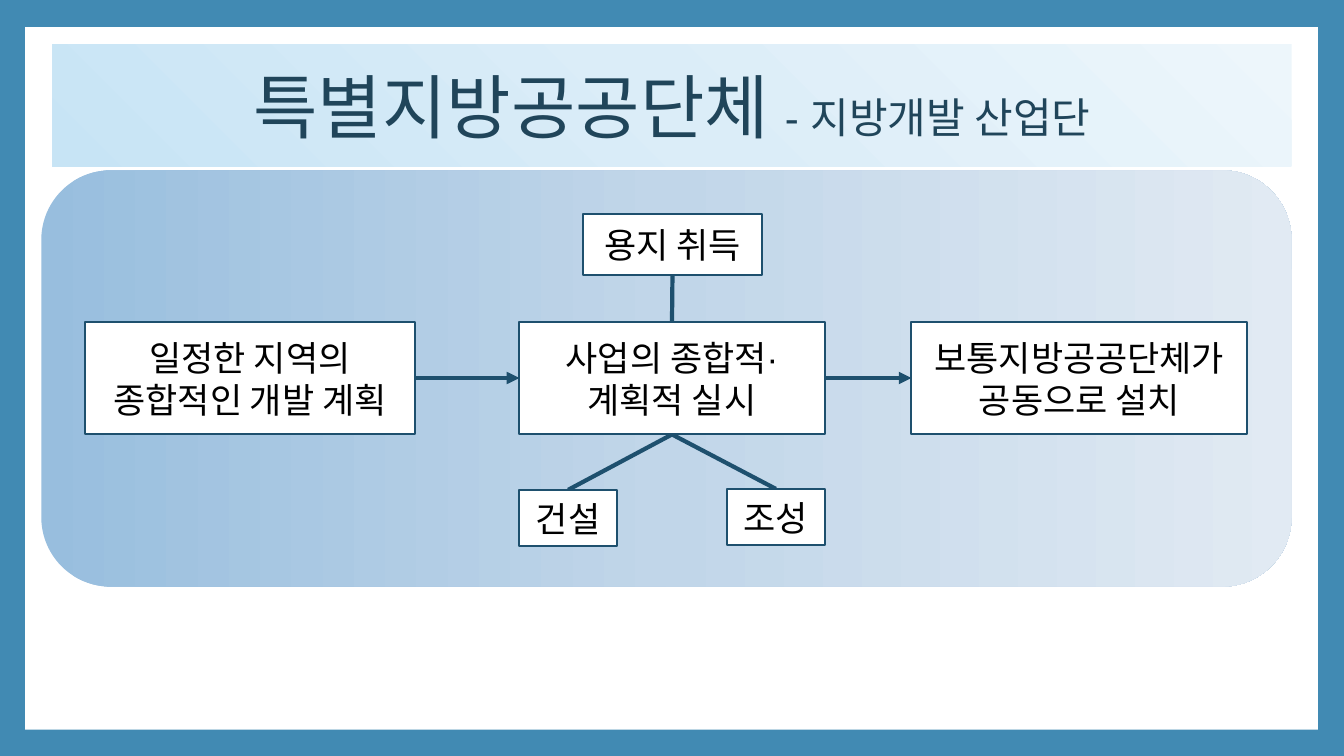
from lxml import etree
from pptx import Presentation
from pptx.dml.color import RGBColor
from pptx.enum.shapes import MSO_CONNECTOR, MSO_SHAPE
from pptx.enum.text import MSO_ANCHOR, PP_ALIGN
from pptx.oxml.ns import qn
from pptx.util import Inches, Pt

COLORS = {
    "frame": "418AB3",
    "white": "FFFFFF",
    "line": "1E506E",
    "title": "20455A",
    "text": "000000",
}
PANEL_STOPS = ["98BEDE", "C1D6E9", "E1EAF3"]
TITLE_STOPS = ["C7E4F5", "DBEDF8", "EDF6FB"]
TOP, LEFT, BOTTOM, RIGHT = range(4)


def add_box(kind, left, top, width, height):
    box = page.shapes.add_shape(kind, Inches(left), Inches(top), Inches(width), Inches(height))
    box.shadow.inherit = False
    box.fill.solid()
    box.fill.fore_color.rgb = RGBColor.from_string(COLORS["white"])
    box.line.fill.background()
    box.text_frame.word_wrap = True
    box.text_frame.vertical_anchor = MSO_ANCHOR.MIDDLE
    return box


def set_gradient(box, stops):
    box.fill.gradient()
    gradient = box._element.spPr.find(qn("a:gradFill"))
    for child in list(gradient):
        gradient.remove(child)
    stop_list = etree.SubElement(gradient, qn("a:gsLst"))
    for index, color in enumerate(stops):
        stop = etree.SubElement(stop_list, qn("a:gs"), pos=str(index * 50000))
        etree.SubElement(stop, qn("a:srgbClr"), val=color)
    return gradient


deck = Presentation()
deck.slide_width = Inches(13.33)
deck.slide_height = Inches(7.5)
page = deck.slides.add_slide(deck.slide_layouts[6])
page.background.fill.solid()
page.background.fill.fore_color.rgb = RGBColor.from_string(COLORS["frame"])

add_box(MSO_SHAPE.RECTANGLE, 0.25, 0.27, 12.82, 6.97)

panel = add_box(MSO_SHAPE.ROUNDED_RECTANGLE, 0.41, 1.69, 12.4, 4.13)
etree.SubElement(set_gradient(panel, PANEL_STOPS), qn("a:lin"), ang="0", scaled="0")

title = add_box(MSO_SHAPE.RECTANGLE, 0.52, 0.44, 12.29, 1.21)
circle = etree.SubElement(set_gradient(title, TITLE_STOPS), qn("a:path"), path="circle")
etree.SubElement(circle, qn("a:fillToRect"), t="100000", r="100000")
para = title.text_frame.paragraphs[0]
para.alignment = PP_ALIGN.CENTER
para.font.name = "Arial"
para.font.color.rgb = RGBColor.from_string(COLORS["title"])
for text, size in [("특별지방공공단체 ", 50), ("- 지방개발 산업단", 30)]:
    span = para.add_run()
    span.text = text
    span.font.size = Pt(size)

steps = [
    ("develop", 7.21, 4.85, 0.97, 0.56, ["조성"]),
    ("build", 5.15, 4.86, 0.97, 0.56, ["건설"]),
    ("land", 5.78, 2.12, 1.78, 0.61, ["용지 취득"]),
    ("founding", 9.04, 3.19, 3.33, 1.12, ["보통지방공공단체가 공동으로 설치"]),
    ("project", 5.15, 3.19, 3.03, 1.12, ["사업의 종합적·", "계획적 실시"]),
    ("plan", 0.84, 3.19, 3.28, 1.12, ["일정한 지역의 종합적인 개발 계획"]),
]
boxes = {}
for name, left, top, width, height, lines in steps:
    box = add_box(MSO_SHAPE.RECTANGLE, left, top, width, height)
    box.line.color.rgb = RGBColor.from_string(COLORS["line"])
    box.line.width = Pt(1.5)
    box.text_frame.text = "\n".join(lines)
    for para in box.text_frame.paragraphs:
        para.alignment = PP_ALIGN.CENTER
        para.font.name = "Arial"
        para.font.size = Pt(25)
        para.font.color.rgb = RGBColor.from_string(COLORS["text"])
    boxes[name] = box

links = [
    ("project", TOP, "land", BOTTOM, False),
    ("project", BOTTOM, "build", TOP, False),
    ("project", BOTTOM, "develop", TOP, False),
    ("plan", RIGHT, "project", LEFT, True),
    ("project", RIGHT, "founding", LEFT, True),
]
for start, start_side, end, end_side, has_arrow in links:
    link = page.shapes.add_connector(MSO_CONNECTOR.STRAIGHT, 0, 0, 0, 0)
    link.begin_connect(boxes[start], start_side)
    link.end_connect(boxes[end], end_side)
    link.line.color.rgb = RGBColor.from_string(COLORS["line"])
    link.line.width = Pt(3)
    if has_arrow:
        etree.SubElement(link.line._get_or_add_ln(), qn("a:tailEnd"), type="triangle")
    etree.SubElement(link._element.spPr, qn("a:effectLst"))
    boxes["develop"]._element.addprevious(link._element)

deck.save("out.pptx")
